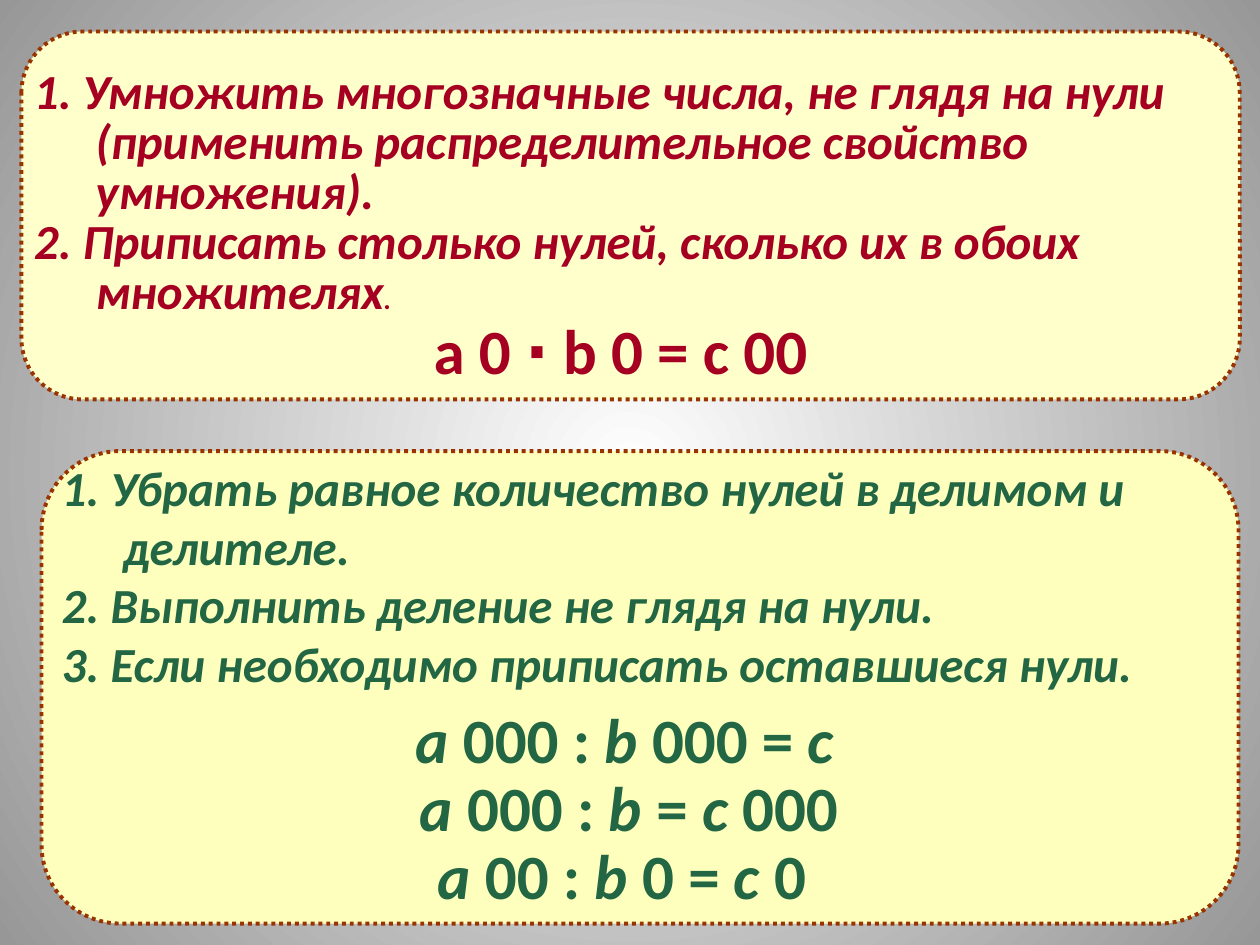
from pptx import Presentation
from pptx.dml.color import RGBColor
from pptx.enum.dml import MSO_LINE
from pptx.enum.shapes import MSO_SHAPE
from pptx.enum.text import MSO_AUTO_SIZE, PP_ALIGN
from pptx.oxml import parse_xml
from pptx.oxml.ns import nsdecls, qn
from pptx.util import Inches, Pt

PANEL = MSO_SHAPE.FLOWCHART_ALTERNATE_PROCESS
DOTTED = MSO_LINE.ROUND_DOT
CENTER = PP_ALIGN.CENTER
GROW = MSO_AUTO_SIZE.SHAPE_TO_FIT_TEXT
RED, GREEN = "A50021", "226644"
HANGING = 0.49


def rgb(value):
    return RGBColor.from_string(value)


def add_text(box, paragraphs, color, size, italic=False, align=None,
             spacing=None, left=None, level=0, inset=0.1):
    """Add a text box; each paragraph is a list of (text, font overrides)."""
    tf = slide.shapes.add_textbox(*map(Inches, box)).text_frame
    tf.word_wrap = True
    tf.auto_size = GROW
    tf.margin_left = tf.margin_right = Inches(inset)
    for i, runs in enumerate(paragraphs):
        p = tf.paragraphs[0] if i == 0 else tf.add_paragraph()
        p.alignment, p.line_spacing, p.level = align, spacing, level
        if left is not None:
            pPr = p._p.get_or_add_pPr()
            pPr.set("marL", str(Inches(left)))
            pPr.set("indent", str(Inches(-HANGING)))
        for text, overrides in runs:
            r = p.add_run()
            r.text = text
            r.font.color.rgb = rgb(color)
            values = {"name": "Calibri", "size": Pt(size), "bold": True, "italic": italic}
            for name, value in (values | overrides).items():
                setattr(r.font, name, value)


prs = Presentation()
prs.slide_width, prs.slide_height = Inches(10), Inches(7.5)
slide = prs.slides.add_slide(prs.slide_layouts[6])

# Radial grey background, white in the middle
fill = slide.background.fill
fill.gradient()
for stop, color in zip(fill.gradient_stops, ("FFFFFF", "979797")):
    stop.color.rgb = rgb(color)
for stop, position in zip(fill.gradient_stops, (0, 1)):
    stop.position = position
grad = next(slide.element.iter(qn("a:gradFill")))
grad.replace(grad.find(qn("a:lin")), parse_xml(
    f'<a:path {nsdecls("a")} path="circle">'
    '<a:fillToRect l="50000" t="50000" r="50000" b="50000"/></a:path>'))

# Panels
for box, color in (((0.33, 3.58, 9.5, 3.75), "FFFFBD"),
                   ((0.17, 0.25, 9.67, 2.92), "FFFFCC")):
    sp = slide.shapes.add_shape(PANEL, *map(Inches, box))
    sp.shadow.inherit = False
    sp.fill.solid()
    sp.fill.fore_color.rgb = rgb(color)
    sp.line.color.rgb = rgb("993300")
    sp.line.width = Pt(2.25)
    sp.line.dash_style = DOTTED

# Multiplication
multiplication_rules = [
    [("1. Умножить многозначные числа, не глядя на нули "
      "(применить распределительное свойство умножения).", {})],
    [("2. Приписать столько нулей, сколько их в обоих множителях", {}),
     (".", {"size": Pt(16)})],
]
add_text((0.17, 0.5, 9.67, 2.09), multiplication_rules, RED, 28, italic=True,
         spacing=0.85, left=HANGING)
add_text((2.58, 2.42, 4.69, 0.7), [[("а 0 ∙ b 0 = с 00", {})]], RED, 36, align=CENTER)

# Division
division_rules = [
    "1. Убрать равное количество нулей в делимом и делителе.",
    "2. Выполнить деление не глядя на нули.",
    "3. Если необходимо приписать оставшиеся нули.",
]
add_text((0, 3.58, 9.75, 2.44), [[(rule, {})] for rule in division_rules], GREEN, 28,
         italic=True, left=2 * HANGING, level=1, inset=0)

# Upright and italic parts alternate in each formula
formulas = [
    (" ", "а ", "000 : ", "b ", "000 = ", "с"),
    (" ", "а ", "000 : ", "b", " = ", "с ", "000"),
    (" ", "а ", "00 : ", "b ", "0 = ", "с ", "0 "),
]
formula_runs = [[(part, {"italic": i % 2 == 1}) for i, part in enumerate(parts)]
                for parts in formulas]
formula_runs[0][0][1].update(size=Pt(14), bold=False)
add_text((1.67, 5.58, 6.53, 1.72), formula_runs, GREEN, 36, align=CENTER, spacing=0.9)

prs.save("out.pptx")
